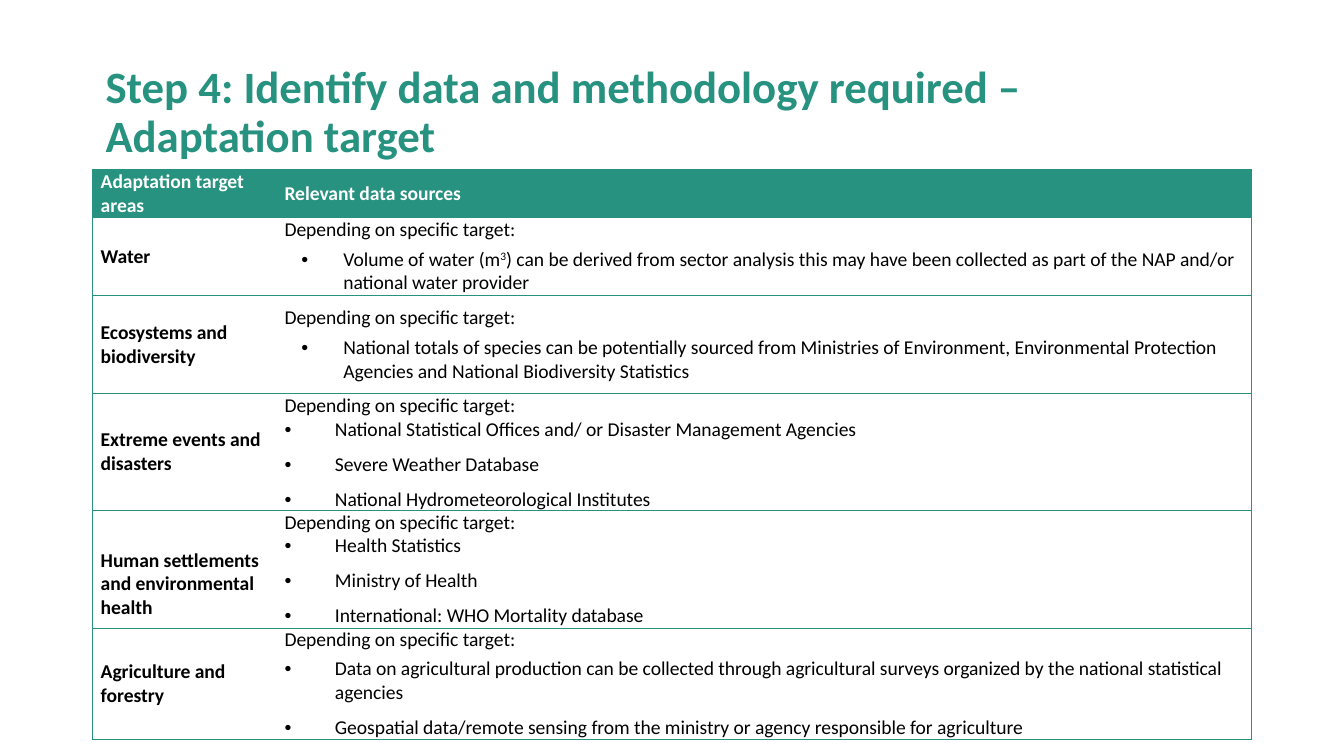
from dataclasses import dataclass

from lxml import etree
from pptx import Presentation
from pptx.dml.color import RGBColor
from pptx.enum.text import MSO_ANCHOR
from pptx.oxml.ns import qn
from pptx.util import Pt

MIDDLE = MSO_ANCHOR.MIDDLE


@dataclass(frozen=True)
class Theme:
    """Colours, font and type sizes of the slide."""
    font: str = "Calibri"
    green: str = "26927F"
    white: str = "FFFFFF"
    black: str = "000000"
    title_size: float = 24
    body_size: float = 10.5
    border: float = 0.5


THEME = Theme()
TITLE = "Step 4: Identify data and methodology required – Adaptation target"
HEADERS = ("Adaptation target areas", "Relevant data sources")
INTRO = "Depending on specific target:"

INSET_BULLET = (31.5, -22.5)
FLUSH_BULLET = (27, -27)
LIST_SPACING = ((0, 6), (0, 3), (3, 3))
EVEN_SPACING = ((3, 3), (3, 3))

# Each row: area, height, top margin of the area, bullet indent, spacing, sources
ROWS = (
    ("Water", 42, 0, INSET_BULLET, EVEN_SPACING, (
        "Volume of water (m^3^) can be derived from sector analysis this may have been "
        "collected as part of the NAP and/or national water provider",)),
    ("Ecosystems and biodiversity", 52.5, 0, INSET_BULLET, EVEN_SPACING, (
        "National totals of species can be potentially sourced from Ministries of Environment, "
        "Environmental Protection Agencies and National Biodiversity Statistics",)),
    ("Extreme events and disasters", 62.5, 0, FLUSH_BULLET, LIST_SPACING, (
        "National Statistical Offices and/ or Disaster Management Agencies",
        "Severe Weather Database",
        "National Hydrometeorological Institutes")),
    ("Human settlements and environmental health", 63, 16, FLUSH_BULLET, LIST_SPACING, (
        "Health Statistics",
        "Ministry of Health",
        "International: WHO Mortality database")),
    ("Agriculture and forestry", 60, 0, FLUSH_BULLET, EVEN_SPACING, (
        "Data on agricultural production can be collected through agricultural surveys "
        "organized by the national statistical agencies",
        "Geospatial data/remote sensing from the ministry or agency responsible for agriculture")),
)
HEADER_HEIGHT = 25.5


def style_font(font, size, color, bold):
    """Set typeface, size, colour and weight."""
    font.name = THEME.font
    font.size = Pt(size)
    font.bold = bold
    font.color.rgb = RGBColor.from_string(color)


def write_paragraph(paragraph, text, color, bold=False, spacing=(3, 0), bullet=None):
    """Write one table paragraph; text between carets is superscript."""
    for index, part in enumerate(text.split("^")):
        run = paragraph.add_run()
        run.text = part
        if index % 2:
            run._r.get_or_add_rPr().set("baseline", "30000")
    paragraph.space_before, paragraph.space_after = map(Pt, spacing)
    if bullet:
        properties = paragraph._p.get_or_add_pPr()
        properties.set("marL", str(Pt(bullet[0])))
        properties.set("indent", str(Pt(bullet[1])))
        etree.SubElement(properties, qn("a:buFont"), typeface="Arial")
        etree.SubElement(properties, qn("a:buChar"), char="•")
    style_font(paragraph.font, THEME.body_size, color, bold)


def format_cell(cell, fill, outer_side, top_margin=0):
    """Set margins, anchor, borders and fill of a cell."""
    cell.vertical_anchor = MIDDLE
    cell.margin_left = cell.margin_right = Pt(4.5)
    cell.margin_top, cell.margin_bottom = Pt(top_margin), 0
    properties = cell._tc.get_or_add_tcPr()
    for side in ("lnL", "lnR", "lnT", "lnB"):
        line = etree.SubElement(properties, qn(f"a:{side}"), w=str(Pt(THEME.border)))
        if side in (outer_side, "lnT", "lnB"):
            solid = etree.SubElement(line, qn("a:solidFill"))
            etree.SubElement(solid, qn("a:srgbClr"), val=THEME.green)
        else:
            etree.SubElement(line, qn("a:noFill"))
    cell.fill.solid()
    cell.fill.fore_color.rgb = RGBColor.from_string(fill)


def add_title(slide, left, top, width, height):
    """Place the slide title in the given box."""
    frame = slide.shapes.add_textbox(Pt(left), Pt(top), Pt(width), Pt(height)).text_frame
    frame.word_wrap = True
    frame.vertical_anchor = MIDDLE
    paragraph = frame.paragraphs[0]
    paragraph.text = TITLE
    paragraph.line_spacing = 0.9
    style_font(paragraph.font, THEME.title_size, THEME.green, True)


def add_sources_table(slide, left, top, width, height):
    """Place the table of adaptation areas and data sources in the given box."""
    table = slide.shapes.add_table(
        len(ROWS) + 1, len(HEADERS), Pt(left), Pt(top), Pt(width), Pt(height)).table
    table.first_row = table.horz_banding = False
    area_width = 98.5
    table.columns[0].width, table.columns[1].width = Pt(area_width), Pt(width - area_width)
    table.rows[0].height = Pt(HEADER_HEIGHT)
    for column, (header, side) in enumerate(zip(HEADERS, ("lnL", "lnR"))):
        cell = table.cell(0, column)
        format_cell(cell, THEME.green, side)
        write_paragraph(cell.text_frame.paragraphs[0], header, THEME.white, bold=True)
    for index, (area, row_height, margin, bullet, spacings, sources) in enumerate(ROWS, 1):
        table.rows[index].height = Pt(row_height)
        area_cell, source_cell = table.cell(index, 0), table.cell(index, 1)
        format_cell(area_cell, THEME.white, "lnL", margin)
        write_paragraph(area_cell.text_frame.paragraphs[0], area, THEME.black, bold=True)
        format_cell(source_cell, THEME.white, "lnR")
        frame = source_cell.text_frame
        write_paragraph(frame.paragraphs[0], INTRO, THEME.black)
        for source, spacing in zip(sources, spacings):
            write_paragraph(frame.add_paragraph(), source, THEME.black,
                            spacing=spacing, bullet=bullet)


def main():
    """Build and save the presentation."""
    presentation = Presentation()
    presentation.slide_width, presentation.slide_height = Pt(720), Pt(405)
    slide = presentation.slides.add_slide(presentation.slide_layouts[6])
    left, width = 49.5, 621
    add_title(slide, left, 21.5, width, 78.5)
    table_height = HEADER_HEIGHT + sum(row[1] for row in ROWS)
    add_sources_table(slide, left, 91, width, table_height)
    presentation.save("out.pptx")


if __name__ == "__main__":
    main()
